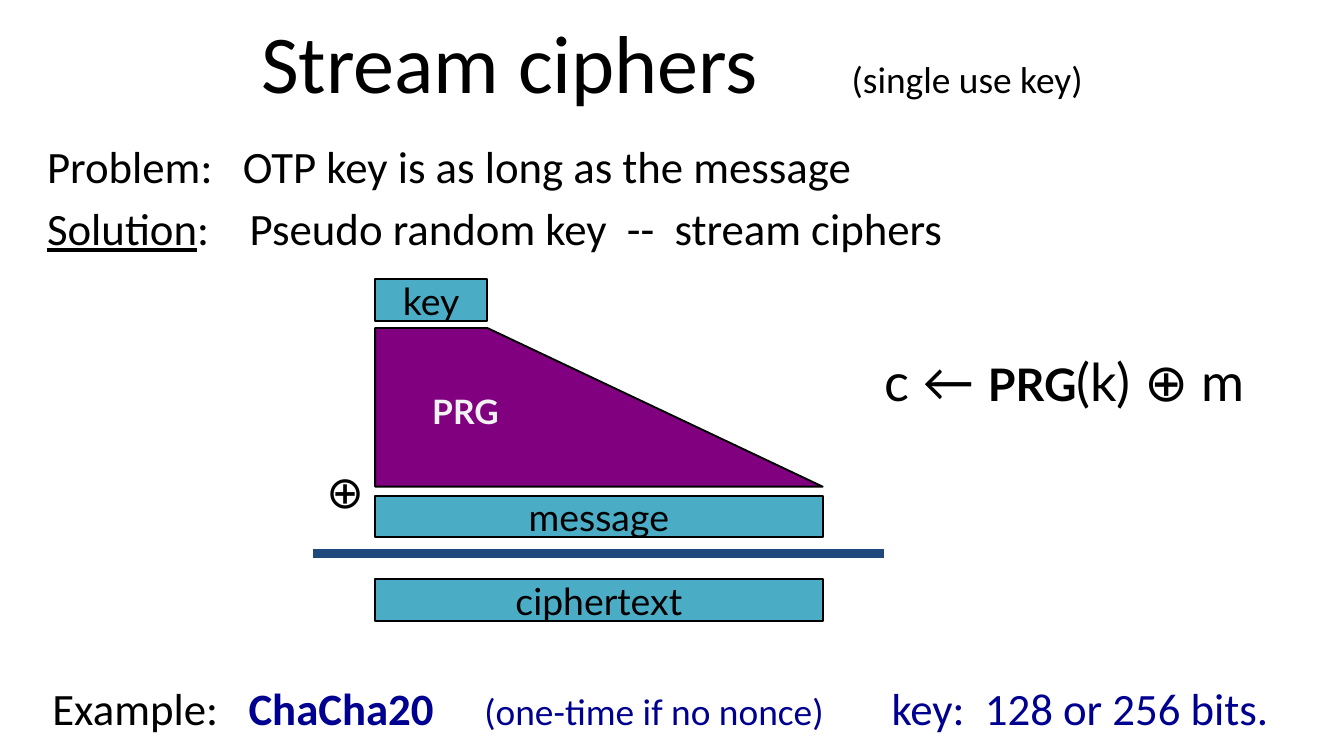
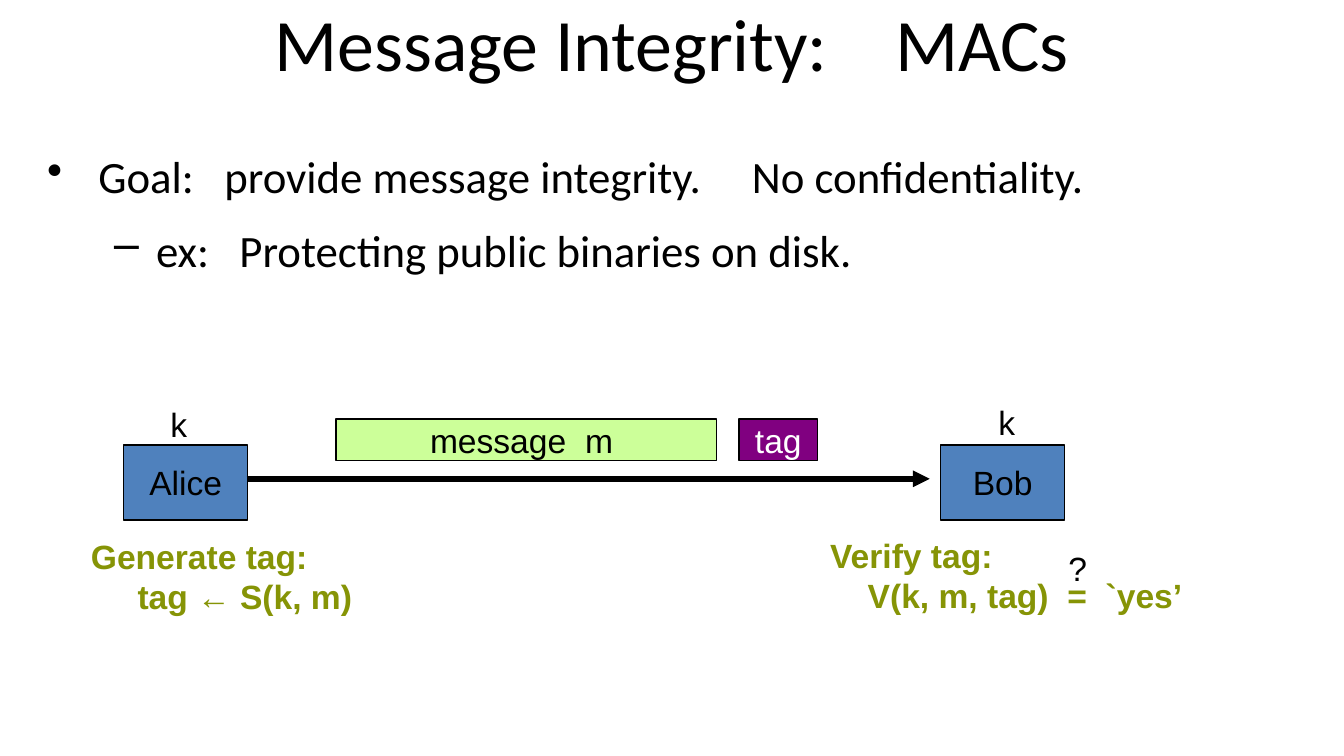
from dataclasses import dataclass
from typing import Optional

import lxml.etree
import pptx
import pptx.dml.color
import pptx.enum.dml
import pptx.enum.shapes
import pptx.enum.text
import pptx.oxml.ns
import pptx.util

Cm = pptx.util.Cm
Pt = pptx.util.Pt
qn = pptx.oxml.ns.qn
Align = pptx.enum.text.PP_ALIGN
Anchor = pptx.enum.text.MSO_ANCHOR


@dataclass(frozen=True)
class Theme:
    black: str = "000000"
    white: str = "FFFFFF"
    pale: str = "F2F2F2"
    teal: str = "4BACC6"
    blue: str = "4F81BD"
    rule: str = "1F497D"
    navy: str = "000090"
    purple: str = "800080"
    lime: str = "CCFF99"
    olive: str = "869406"
    body_font: str = "Calibri"
    cipher_font: str = "Lato"
    mac_font: str = "Arial"
    title: float = 44
    title_small: float = 39.6
    formula: float = 28
    body: float = 24
    label: float = 20
    small: float = 18


T = Theme()
SPACE_WIDTH = {T.body_font: 0.226, T.cipher_font: 0.226, T.mac_font: 0.278}


@dataclass(frozen=True)
class Style:
    size: float = T.body
    font: str = T.body_font
    color: str = T.black
    bold: bool = False
    underline: bool = False


BODY = Style()
NOTE = Style(T.label)
KEY_FACT = Style(color=T.navy)
CIPHER = Style(T.label, T.cipher_font)
FORMULA = Style(T.formula, T.cipher_font)
MAC = Style(T.small, T.mac_font)
ACTION = Style(T.small, T.mac_font, T.olive, bold=True)


@dataclass(frozen=True)
class Run:
    text: str
    style: Style = BODY
    gap: int = 0


@dataclass(frozen=True)
class Para:
    runs: tuple[Run, ...]
    align: Optional[Align] = None
    before: float = 0
    line: Optional[float] = None
    indent: float = 0
    hanging: float = 0
    bullet: str = ""
    level: int = 0


@dataclass(frozen=True)
class Box:
    left: float
    top: float
    width: float
    height: float

    def lengths(self) -> tuple:
        return Cm(self.left), Cm(self.top), Cm(self.width), Cm(self.height)


@dataclass(frozen=True)
class Block:
    box: Box
    run: Run
    fill: str
    border: float


def rgb(value: str) -> pptx.dml.color.RGBColor:
    return pptx.dml.color.RGBColor.from_string(value)


def add_run(p, text: str, style: Style):
    r = p.add_run()
    r.text = text
    r.font.size = Pt(style.size)
    r.font.name = style.font
    r.font.bold = style.bold
    r.font.underline = style.underline
    r.font.color.rgb = rgb(style.color)
    return r


def write(tf, paras: tuple[Para, ...]) -> None:
    for i, para in enumerate(paras):
        p = tf.paragraphs[0] if i == 0 else tf.add_paragraph()
        p.level = para.level
        if para.align is not None:
            p.alignment = para.align
        if para.line:
            p.line_spacing = para.line
        if i and para.before:
            p.space_before = Pt(para.before)
        pPr = p._p.get_or_add_pPr()
        if para.indent:
            pPr.set("marL", str(Cm(para.indent)))
            pPr.set("indent", str(Cm(-para.hanging)))
        if para.bullet:
            lxml.etree.SubElement(pPr, qn("a:buChar")).set("char", para.bullet)
        for run in para.runs:
            add_run(p, run.text, run.style)
            if run.gap:
                r = add_run(p, " ", run.style)
                extra = (run.gap - 1) * SPACE_WIDTH[run.style.font] * run.style.size
                r._r.get_or_add_rPr().set("spc", str(round(extra * 100)))


def add_text(shapes, box: Box, *paras: Para, wrap: bool = False, grow: bool = True,
             anchor: Anchor = Anchor.TOP) -> None:
    tf = shapes.add_textbox(*box.lengths()).text_frame
    tf.word_wrap = wrap
    tf.vertical_anchor = anchor
    size = pptx.enum.text.MSO_AUTO_SIZE
    tf.auto_size = size.SHAPE_TO_FIT_TEXT if grow else size.NONE
    write(tf, paras)


def add_title(s, box: Box, *runs: Run) -> None:
    add_text(s.shapes, box, Para(runs, Align.CENTER), wrap=True, grow=False,
             anchor=Anchor.MIDDLE)


def add_body(s, box: Box, *paras: Para) -> None:
    add_text(s.shapes, box, *paras, wrap=True, grow=False)


def paint(sp, fill: str, border: float) -> None:
    sp.shadow.inherit = False
    sp.fill.solid()
    sp.fill.fore_color.rgb = rgb(fill)
    sp.line.color.rgb = rgb(T.black)
    sp.line.width = Pt(border)


def add_block(s, block: Block) -> None:
    sp = s.shapes.add_shape(pptx.enum.shapes.MSO_SHAPE.RECTANGLE, *block.box.lengths())
    paint(sp, block.fill, block.border)
    tf = sp.text_frame
    tf.word_wrap = False
    tf.vertical_anchor = Anchor.MIDDLE
    write(tf, (Para((block.run,), Align.CENTER),))


def add_line(s, left: float, right: float, y: float, color: str, width: float,
             arrow: bool = False) -> None:
    sp = s.shapes.add_connector(pptx.enum.shapes.MSO_CONNECTOR.STRAIGHT,
                                Cm(left), Cm(y), Cm(right), Cm(y))
    sp.line.color.rgb = rgb(color)
    sp.line.width = Pt(width)
    if arrow:
        lxml.etree.SubElement(sp.line._get_or_add_ln(), qn("a:tailEnd")).set("type", "triangle")
    lxml.etree.SubElement(sp._element.spPr, qn("a:effectLst"))


def add_stream_ciphers(s) -> None:
    left, key_width, width, height = 7.09, 2.12, 8.46, 0.79
    add_title(s, Box(1.27, -0.05, 22.86, 2.39),
              Run("Stream ciphers", Style(T.title), gap=5), Run("(single use key)", NOTE))
    add_body(
        s, Box(0.64, 2.49, 24.33, 2.64),
        Para((Run("Problem:", gap=3), Run("OTP key is as long as the message"))),
        Para((Run("Solution", Style(underline=True)), Run(":", gap=4),
              Run("Pseudo random key", gap=2), Run("--", gap=2), Run("stream ciphers")),
             before=4.8))
    for text, top, w in (("key", 5.28, key_width), ("message", 9.37, width),
                         ("ciphertext", 10.95, width)):
        add_block(s, Block(Box(left, top, w, height), Run(text, CIPHER), T.teal, 1))

    top, bottom = 6.2, 9.2
    fb = s.shapes.build_freeform(Cm(left), Cm(top))
    fb.add_line_segments([(Cm(left), Cm(bottom)), (Cm(left + width), Cm(bottom)),
                          (Cm(left + key_width), Cm(top))], close=True)
    paint(fb.convert_to_shape(), T.purple, 1)
    add_text(s.shapes, Box(7.92, 7.19, 1.88, 1.12),
             Para((Run("PRG", Style(T.small, T.cipher_font, T.pale, bold=True)),
                   Run(" ", CIPHER))))
    add_text(s.shapes, Box(5.92, 8.64, 1.17, 1.27),
             Para((Run("⊕", Style(T.body, T.cipher_font)),), Align.CENTER))
    add_line(s, 5.92, 16.71, 10.46, T.rule, 4.5)
    add_text(s.shapes, Box(16.46, 6.48, 7.9, 1.45),
             Para((Run("c ← ", FORMULA),
                   Run("PRG", Style(T.body, T.cipher_font, bold=True)),
                   Run("(k) ⊕ m", FORMULA))))
    add_text(s.shapes, Box(0.74, 12.75, 23.67, 1.27),
             Para((Run("Example:", gap=3),
                   Run("ChaCha20", Style(color=T.navy, bold=True), gap=5),
                   Run("(one-time if no nonce)", Style(T.label, color=T.navy), gap=8),
                   Run("key:", KEY_FACT, gap=2), Run("128 or 256 bits.", KEY_FACT))))


def add_message_integrity(s) -> None:
    title = Style(T.title_small)
    add_title(s, Box(1.9, 0, 21.59, 1.57),
              Run("Message Integrity:", title, gap=4), Run("MACs", title))
    add_body(
        s, Box(0.64, 2.49, 24.77, 11.43),
        Para((Run("Goal:", gap=3), Run("provide message integrity.", gap=5),
              Run("No confidentiality.")),
             line=1.2, indent=0.97, hanging=0.97, bullet="•"),
        Para((Run("ex:", gap=3), Run("Protecting public binaries on disk.")),
             before=4.8, line=1.2, indent=2.06, hanging=0.79, bullet="–", level=1))
    for name, left, key_left, key_top in (("Alice", 2.34, 2.97, 7.52),
                                          ("Bob", 17.78, 18.62, 7.47)):
        add_block(s, Block(Box(left, 8.41, 2.34, 1.42), Run(name, MAC), T.blue, 0.75))
        add_text(s.shapes, Box(key_left, key_top, 0.84, 1.02), Para((Run("k", MAC),)))
    add_line(s, 4.66, 17.57, 9.05, T.black, 3, arrow=True)

    tag = Style(T.small, T.mac_font, T.white)
    add_block(s, Block(Box(13.97, 7.92, 1.48, 0.79), Run("tag", tag), T.purple, 0.75))
    message = Block(Box(6.35, 7.92, 7.19, 0.79), Run("message", MAC, gap=2), T.lime, 0.75)
    add_block(s, message)
    add_run(s.shapes[-1].text_frame.paragraphs[0], "m ", MAC)

    add_text(s.shapes, Box(1.47, 10, 9.09, 1.8),
             Para((Run("Generate tag:", ACTION),)),
             Para((Run("tag ← S(k, m)", ACTION),), indent=0.88), wrap=True)
    verify = s.shapes.add_group_shape().shapes
    add_text(verify, Box(15.44, 9.98, 7.24, 1.8),
             Para((Run("Verify tag:", ACTION),)),
             Para((Run("V(k, m, tag)", ACTION, gap=2), Run("=", ACTION, gap=2),
                   Run("`yes’", ACTION)), indent=0.71))
    add_text(verify, Box(19.94, 10.24, 0.86, 1.02), Para((Run("?", MAC),)))


def main() -> None:
    prs = pptx.Presentation()
    prs.slide_width, prs.slide_height = Cm(25.4), Cm(14.29)
    for build in (add_stream_ciphers, add_message_integrity):
        build(prs.slides.add_slide(prs.slide_layouts[6]))
    prs.save("out.pptx")


if __name__ == "__main__":
    main()
